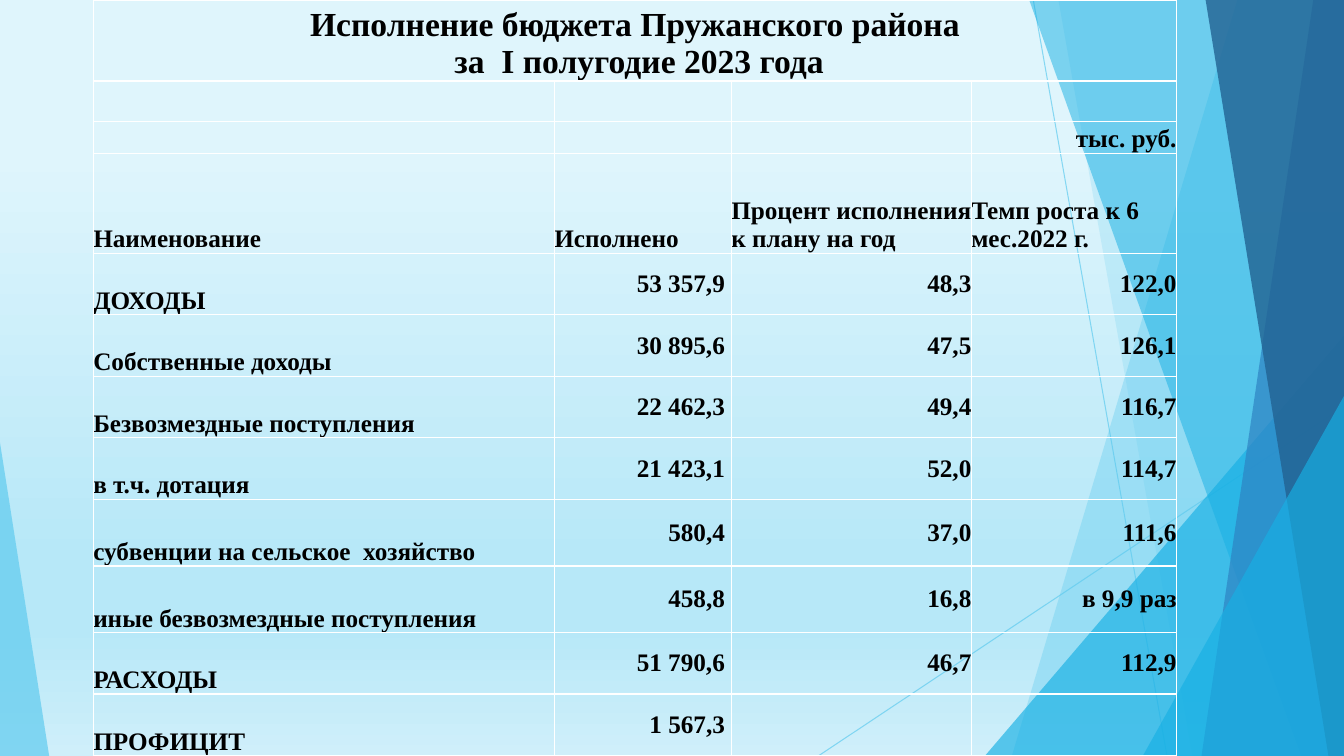
from lxml.etree import SubElement
from pptx import Presentation
from pptx.dml.color import RGBColor
from pptx.enum.shapes import MSO_CONNECTOR, MSO_SHAPE
from pptx.enum.text import MSO_ANCHOR, PP_ALIGN
from pptx.oxml.ns import qn
from pptx.util import Cm, Pt

WIDE, HIGH = 33.87, 19.05
HUES = {"sky": "5FCBEF", "cyan": "17B0E4", "blue": "2E83C3", "navy": "226292",
        "ink": "000000", "grid": "FFFFFF"}
# Background stops: position in percent, colour
STOPS = [(20, "DFF5FC"), (74, "B7E8F8"), (83, "B7E8F8"), (100, "CFEFFA")]

# Facets reaching the right edge: top x, foot x, colour, opacity
BANDS = [(31.19, 25.5, "sky", 36), (26.67, 30.05, "sky", 20),
         (25.93, 32.79, "cyan", 50), (33.1, 30.28, "blue", 70),
         (30.38, 33.48, "navy", 80)]

COLS = [11.62, 4.46, 6.05, 5.17]
ROWS = [2.04, 1.02, 0.8, 2.52] + [1.55] * 4 + [1.68] * 2 + [1.55] * 2
TITLE = "Исполнение бюджета Пружанского района\v за  I полугодие 2023 года"
HEADS = ["Наименование", "Исполнено", "Процент исполнения к плану на год",
         "Темп роста к 6 мес.2022 г."]
DATA = [
    ("ДОХОДЫ", "53 357,9", "48,3", "122,0"),
    ("Собственные доходы", "30 895,6", "47,5", "126,1"),
    ("Безвозмездные поступления", "22 462,3", "49,4", "116,7"),
    ("в т.ч. дотация", "21 423,1", "52,0", "114,7"),
    ("субвенции на сельское  хозяйство", "580,4", "37,0", "111,6"),
    ("иные безвозмездные поступления", "458,8", "16,8", "в 9,9 раз"),
    ("РАСХОДЫ", "51 790,6", "46,7", "112,9"),
    ("ПРОФИЦИТ", "1 567,3", "", ""),
]
FONT = {"name": "Times New Roman", "size": Pt(18), "bold": True}
CELL = {"margin_left": 0, "margin_right": 0, "margin_top": 0, "margin_bottom": 0,
        "vertical_anchor": MSO_ANCHOR.BOTTOM}


def apply(item, form):
    for key, value in form.items():
        setattr(item, key, value)


def hue(name):
    return RGBColor.from_string(HUES[name])


def fade(shape, share):
    for node in list(shape.element.iter(qn("a:srgbClr"))):
        SubElement(node, qn("a:alpha"), val=str(share * 1000))


def paint(shape, name, share):
    shape.shadow.inherit = False
    shape.fill.solid()
    shape.fill.fore_color.rgb = hue(name)
    shape.line.fill.background()
    fade(shape, share)


def backdrop(slide):
    fill = slide.background.fill
    fill.gradient()
    fill.gradient_angle = 270
    stops = next(slide.element.iter(qn("a:gsLst")))
    for old in list(stops):
        stops.remove(old)
    for place, tone in STOPS:
        stop = SubElement(stops, qn("a:gs"), pos=str(place * 1000))
        SubElement(stop, qn("a:srgbClr"), val=tone)


def ray(slide, *ends):
    line = slide.shapes.add_connector(MSO_CONNECTOR.STRAIGHT, *map(Cm, ends))
    line.line.color.rgb = hue("sky")
    line.line.width = Pt(0.75)
    fade(line, 70)
    SubElement(line.element.spPr, qn("a:effectLst"))


def band(slide, top, foot, name, share):
    pen = slide.shapes.build_freeform(Cm(top), Cm(-0.02))
    points = [(WIDE, -0.02), (WIDE, HIGH), (foot, HIGH)]
    pen.add_line_segments([(Cm(x), Cm(y)) for x, y in points])
    paint(pen.convert_to_shape(), name, share)


def wedge(slide, box, peak, name, share):
    shape = slide.shapes.add_shape(MSO_SHAPE.ISOSCELES_TRIANGLE, *map(Cm, box))
    shape.adjustments[0] = peak
    paint(shape, name, share)


def border(cell):
    props = cell._tc.get_or_add_tcPr()
    for side in ("lnL", "lnR", "lnT", "lnB"):
        line = SubElement(props, qn("a:" + side), w=str(Pt(1)))
        fill = SubElement(line, qn("a:solidFill"))
        SubElement(fill, qn("a:srgbClr"), val=HUES["grid"])


def write(cell, text, align=PP_ALIGN.LEFT, size=18, **form):
    cell.text = text
    apply(cell, form)
    para = cell.text_frame.paragraphs[0]
    para.alignment = align
    for run in para.runs:
        apply(run.font, {**FONT, "size": Pt(size)})
        run.font.color.rgb = hue("ink")


def budget(slide):
    frame = slide.shapes.add_table(len(ROWS), len(COLS), Cm(2.35), 0,
                                   Cm(sum(COLS)), Cm(sum(ROWS)))
    table = frame.table
    apply(table, {"first_row": False, "horz_banding": False})
    for col, width in zip(table.columns, COLS):
        col.width = Cm(width)
    for row, height in zip(table.rows, ROWS):
        row.height = Cm(height)
    for cell in table.iter_cells():
        apply(cell, CELL)
        border(cell)
        cell.fill.background()

    # Heading rows
    table.cell(0, 0).merge(table.cell(0, 3))
    write(table.cell(0, 0), TITLE, PP_ALIGN.CENTER, 24)
    write(table.cell(2, 3), "тыс. руб.", PP_ALIGN.RIGHT)
    for c, head in enumerate(HEADS):
        write(table.cell(3, c), head, PP_ALIGN.LEFT if c else PP_ALIGN.JUSTIFY)

    # Budget lines
    for r, (name, *sums) in enumerate(DATA, 4):
        write(table.cell(r, 0), name)
        for c, value in enumerate(sums, 1):
            if value:
                write(table.cell(r, c), value, PP_ALIGN.RIGHT,
                      vertical_anchor=MSO_ANCHOR.MIDDLE,
                      margin_right=Cm(0.16 if c == 1 else 0))


def main():
    deck = Presentation()
    apply(deck, {"slide_width": Cm(WIDE), "slide_height": Cm(HIGH)})
    slide = deck.slides.add_slide(deck.slide_layouts[6])
    backdrop(slide)

    # Facets, from back to front
    ray(slide, 26.04, 0, 29.41, HIGH)
    ray(slide, WIDE, 10.24, 20.62, HIGH)
    for item in BANDS[:2]:
        band(slide, *item)
    wedge(slide, (24.82, 8.46, 9.05, 10.59), 1, "cyan", 66)
    for item in BANDS[2:]:
        band(slide, *item)
    wedge(slide, (28.8, 9.98, 5.07, 9.07), 1, "cyan", 66)
    wedge(slide, (0, 11.15, 1.24, 7.9), 0, "sky", 70)

    budget(slide)
    deck.save("out.pptx")


if __name__ == "__main__":
    main()
